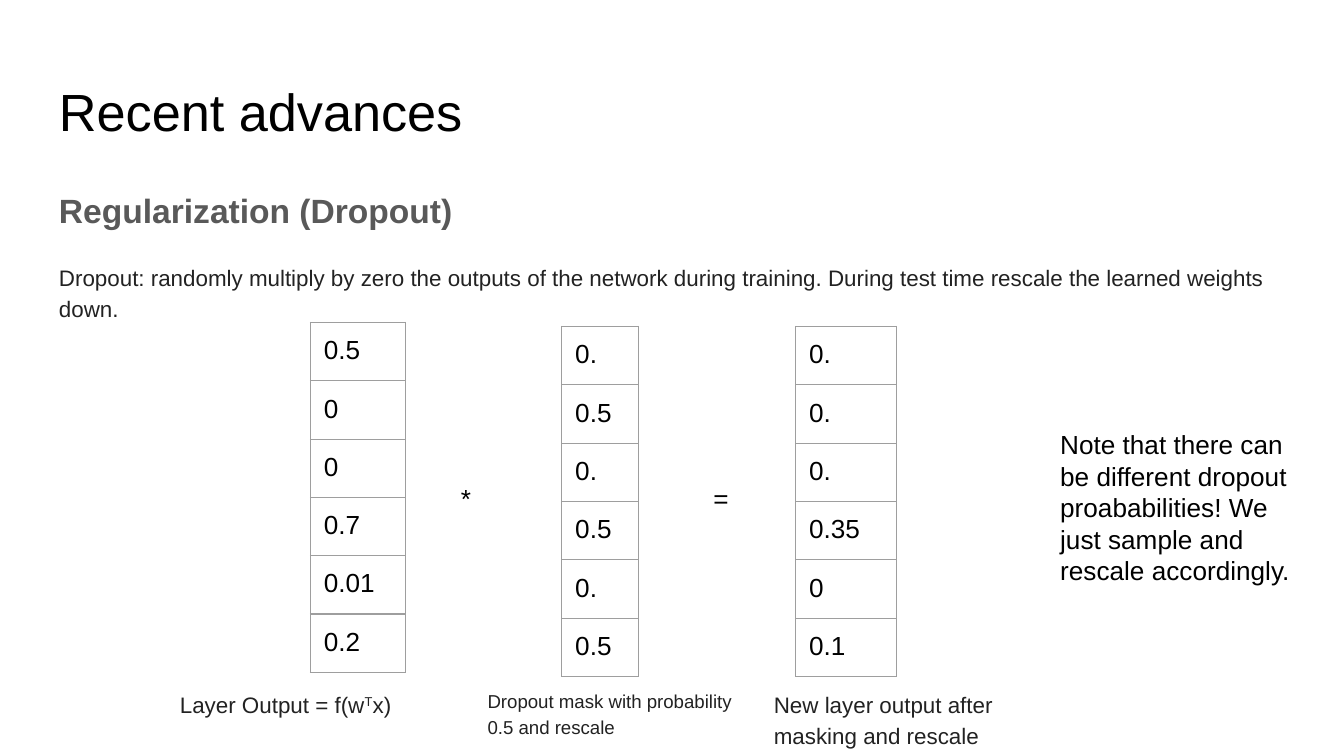
"""Build the slide on dropout regularization."""
from lxml.etree import SubElement
from pptx import Presentation
from pptx.dml.color import RGBColor
from pptx.oxml.ns import qn
from pptx.util import Inches, Pt

BLACK = RGBColor(0x00, 0x00, 0x00)
DARK = RGBColor(0x22, 0x22, 0x22)
GRAY = RGBColor(0x59, 0x59, 0x59)
RULE = RGBColor(0x9E, 0x9E, 0x9E)
FONT = "Arial"
MARGIN = 0.1
VALUE_SIZE = 14
FIRST_ROW_HEIGHT, ROW_HEIGHT = 0.17, 0.42
CAPTION_TOP, CAPTION_WIDTH, CAPTION_HEIGHT = 5.01, 2.04, 0.62
OPERATOR_TOP, OPERATOR_SIZE = 3.49, 0.39

TITLE = "Recent advances"
HEADING = "Regularization (Dropout)"
EXPLANATION = (
    "Dropout: randomly multiply by zero the outputs of the network during "
    "training. During test time rescale the learned weights down."
)
NOTE = (
    "Note that there can be different dropout proababilities! "
    "We just sample and rescale accordingly."
)
VECTORS = [
    (2.31, 2.4, 0.71, ["0.5", "0", "0", "0.7", "0.01", "0.2"]),
    (4.18, 2.43, 0.57, ["0.", "0.5", "0.", "0.5", "0.", "0.5"]),
    (5.92, 2.43, 0.75, ["0.", "0.", "0.", "0.35", "0", "0.1"]),
]
OPERATORS = [(3.33, "*"), (5.21, "=")]
CAPTIONS = [
    (1.24, 12, ["Layer Output = f(w", ("T", 30000), "x)"]),
    (3.53, 10, ["Dropout mask with probability 0.5 and rescale"]),
    (5.66, 12, ["New layer output after masking and rescale"]),
]


def add_run(paragraph, content, size, color, bold=False):
    text, baseline = content if isinstance(content, tuple) else (content, None)
    run = paragraph.add_run()
    run.text = text
    run.font.name = FONT
    run.font.size = Pt(size)
    run.font.bold = bold
    run.font.color.rgb = color
    if baseline:
        run.font._element.set("baseline", str(baseline))


def set_margins(holder):
    holder.margin_left = holder.margin_right = Inches(MARGIN)
    holder.margin_top = holder.margin_bottom = Inches(MARGIN)


def add_text(slide, box, paragraphs, spaced=False):
    frame = slide.shapes.add_textbox(*map(Inches, box)).text_frame
    frame.word_wrap = True
    set_margins(frame)
    for index, (runs, size, color, bold) in enumerate(paragraphs):
        paragraph = frame.add_paragraph() if index else frame.paragraphs[0]
        if spaced:
            paragraph.line_spacing = 1.15
            paragraph.space_after = Pt(16)
        for content in runs:
            add_run(paragraph, content, size, color, bold)


def add_borders(cell):
    properties = cell._tc.get_or_add_tcPr()
    for side in ("a:lnL", "a:lnR", "a:lnT", "a:lnB"):
        line = SubElement(properties, qn(side), w=str(Pt(0.75)))
        fill = SubElement(line, qn("a:solidFill"))
        SubElement(fill, qn("a:srgbClr"), val=str(RULE))


def add_value(cell, value):
    paragraph = cell.text_frame.paragraphs[0]
    add_run(paragraph, value, VALUE_SIZE, BLACK)
    ending = SubElement(paragraph._p, qn("a:endParaRPr"), sz=str(VALUE_SIZE * 100))
    SubElement(ending, qn("a:latin"), typeface=FONT)


def add_vector(slide, left, top, width, values):
    heights = [FIRST_ROW_HEIGHT] + [ROW_HEIGHT] * (len(values) - 1)
    box = (left, top, width, sum(heights))
    table = slide.shapes.add_table(len(values), 1, *map(Inches, box)).table
    table.first_row = table.horz_banding = False
    for row, height, value in zip(table.rows, heights, values):
        row.height = Inches(height)
        cell = row.cells[0]
        set_margins(cell)
        add_borders(cell)
        cell.fill.background()
        add_value(cell, value)


def main():
    deck = Presentation()
    deck.slide_width = Inches(10)
    deck.slide_height = deck.slide_width * 9 // 16
    slide = deck.slides.add_slide(deck.slide_layouts[6])

    add_text(slide, (0.34, 0.49, 9.32, 0.63), [([TITLE], 28, BLACK, False)])
    body = [([HEADING], 18, GRAY, True), ([EXPLANATION], 12, DARK, False)]
    add_text(slide, (0.34, 1.27, 9.32, 1.32), body, spaced=True)
    for vector in VECTORS:
        add_vector(slide, *vector)
    for left, sign in OPERATORS:
        box = (left, OPERATOR_TOP, OPERATOR_SIZE, OPERATOR_SIZE)
        add_text(slide, box, [([sign], 14, BLACK, False)])
    for left, size, runs in CAPTIONS:
        box = (left, CAPTION_TOP, CAPTION_WIDTH, CAPTION_HEIGHT)
        add_text(slide, box, [(runs, size, DARK, False)], spaced=True)
    add_text(slide, (7.79, 3.09, 2.04, 1.32), [([NOTE], 14, BLACK, False)])

    deck.save("out.pptx")


if __name__ == "__main__":
    main()
